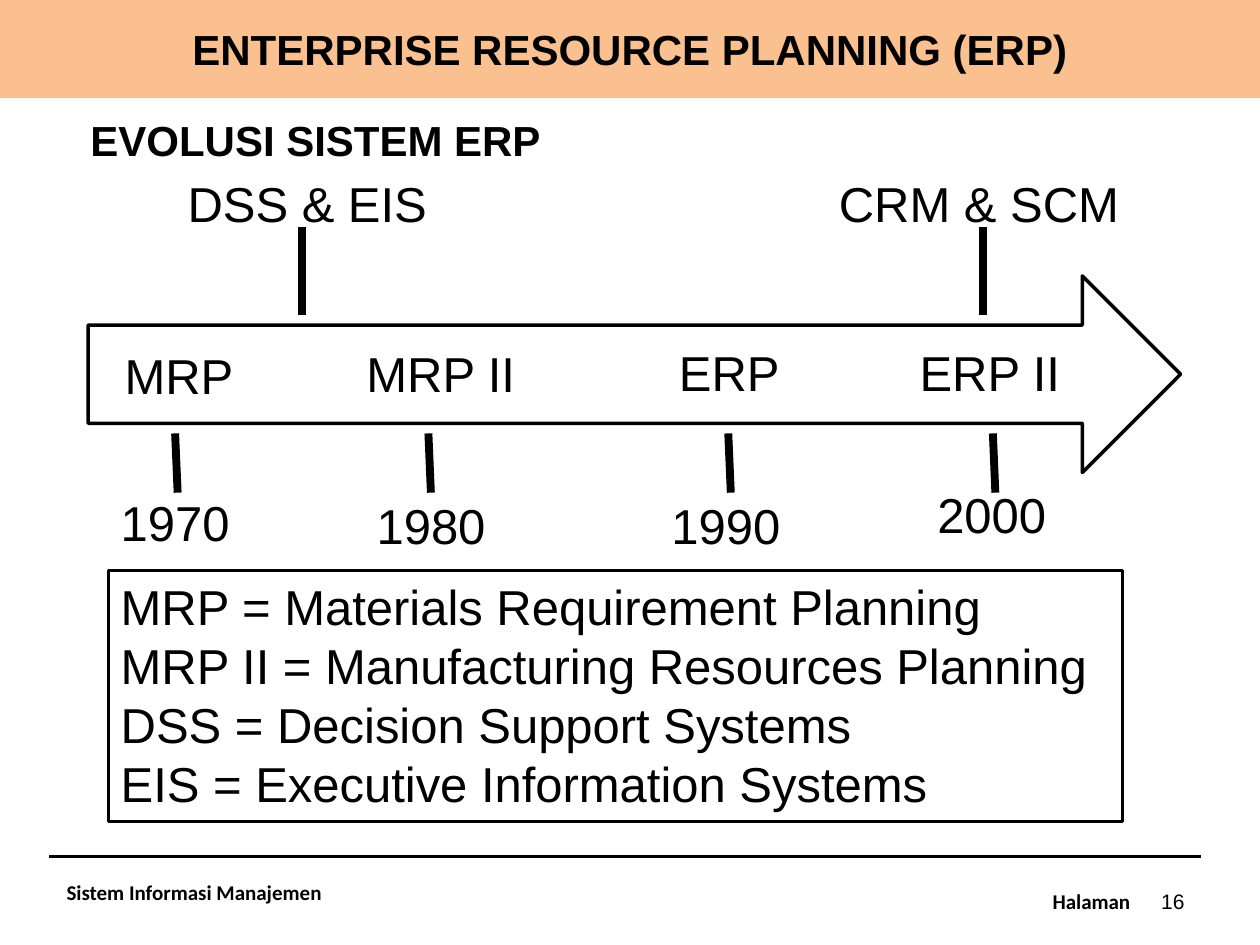
from lxml import etree
from pptx import Presentation
from pptx.dml.color import RGBColor
from pptx.enum.shapes import MSO_CONNECTOR, MSO_SHAPE
from pptx.enum.text import MSO_ANCHOR, PP_ALIGN
from pptx.oxml.ns import qn
from pptx.util import Inches, Pt

BLACK = RGBColor(0x00, 0x00, 0x00)
PEACH = RGBColor(0xFA, 0xC0, 0x90)

STAGES = [  # name, its left, top and width; year, its left and top; tick left
    ("MRP", 0.89, 2.69, 1.09, "1970", 0.86, 3.86, 1.39),
    ("MRP II", 2.81, 2.68, 1.41, "1980", 2.89, 3.88, 3.4),
    ("ERP", 5.29, 2.67, 1.09, "1990", 5.23, 3.88, 5.78),
    ("ERP II", 7.2, 2.67, 1.33, "2000", 7.34, 3.8, 7.88),
]
ADDITIONS = [  # label, left, width, stem position
    ("DSS & EIS", 1.39, 2.11, 2.4),
    ("CRM & SCM", 6.56, 2.5, 7.8),
]
GLOSSARY = [
    "MRP = Materials Requirement Planning",
    "MRP II = Manufacturing Resources Planning",
    "DSS = Decision Support Systems",
    "EIS = Executive Information Systems",
]


def write(shape, lines, size=28, bold=False, font="Arial",
          align=PP_ALIGN.LEFT, anchor=MSO_ANCHOR.TOP):
    frame = shape.text_frame
    frame.word_wrap = True
    frame.vertical_anchor = anchor
    frame.text = "\n".join(lines)
    for paragraph in frame.paragraphs:
        paragraph.alignment = align
        paragraph.font.name = font
        paragraph.font.size = Pt(size)
        paragraph.font.bold = bold
        paragraph.font.color.rgb = BLACK


def add_label(slide, text, left, top, width, height=0.57, **style):
    box = slide.shapes.add_textbox(*map(Inches, (left, top, width, height)))
    write(box, [text], **style)


def add_block(slide, kind, left, top, width, height, fill=None, outline=None):
    block = slide.shapes.add_shape(kind, *map(Inches, (left, top, width, height)))
    block.shadow.inherit = False
    if fill is None:
        block.fill.background()
    else:
        block.fill.solid()
        block.fill.fore_color.rgb = fill
    if outline is None:
        block.line.fill.background()
    else:
        block.line.color.rgb = BLACK
        block.line.width = Pt(outline)
    return block


def add_rule(slide, x1, y1, x2, y2, weight=4.5):
    rule = slide.shapes.add_connector(
        MSO_CONNECTOR.STRAIGHT, *map(Inches, (x1, y1, x2, y2)))
    rule.line.color.rgb = BLACK
    rule.line.width = Pt(weight)
    etree.SubElement(rule._element.spPr, qn("a:effectLst"))


def add_footer(slide):
    add_rule(slide, 0.39, 6.8, 9.53, 6.8, weight=1.5)
    middle = {"height": 0.4, "size": 12, "anchor": MSO_ANCHOR.MIDDLE}
    add_label(slide, "Sistem Informasi Manajemen", 0.43, 6.88, 2.54,
              bold=True, font="Calibri", **middle)
    add_label(slide, "Halaman", 8.13, 6.95, 0.94,
              bold=True, font="Calibri", align=PP_ALIGN.RIGHT, **middle)
    add_label(slide, "16", 9.06, 6.95, 0.44, align=PP_ALIGN.RIGHT, **middle)


def add_timeline(slide):
    add_block(slide, MSO_SHAPE.RIGHT_ARROW, 0.7, 2.19, 8.67, 1.56, outline=2)
    for name, left, top, width, year, year_left, year_top, tick in STAGES:
        add_label(slide, name, left, top, width)
        add_rule(slide, tick, 3.44, tick + 0.02, 3.91)
        add_label(slide, year, year_left, year_top, 1.09)
    for label, left, width, stem in ADDITIONS:
        add_label(slide, label, left, 1.33, width)
        add_rule(slide, stem, 1.8, stem, 2.5)


def main():
    prs = Presentation()
    prs.slide_width, prs.slide_height = Inches(10), Inches(7.5)
    slide = prs.slides.add_slide(prs.slide_layouts[6])

    title = add_block(slide, MSO_SHAPE.RECTANGLE, 0, 0, 10, 0.78, fill=PEACH)
    write(title, ["ENTERPRISE RESOURCE PLANNING (ERP)"], size=24, bold=True,
          align=PP_ALIGN.CENTER, anchor=MSO_ANCHOR.MIDDLE)
    add_label(slide, "EVOLUSI SISTEM ERP", 0.62, 0.86, 3.83, 0.5,
              size=24, bold=True)
    add_timeline(slide)
    glossary = add_block(slide, MSO_SHAPE.RECTANGLE, 0.86, 4.53, 8.05, 1.99,
                         outline=1.5)
    write(glossary, GLOSSARY)
    add_footer(slide)

    prs.save("out.pptx")


if __name__ == "__main__":
    main()
